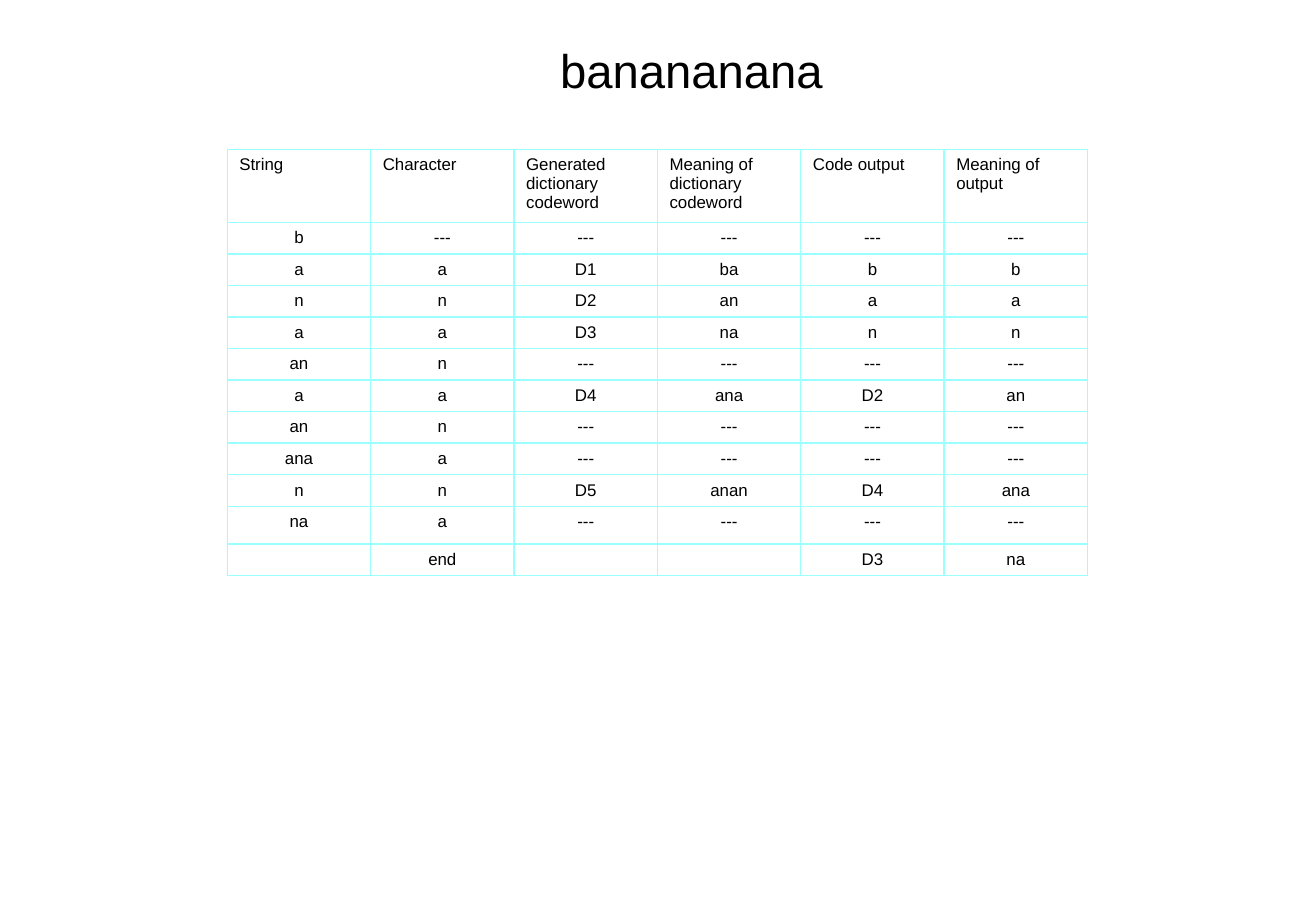
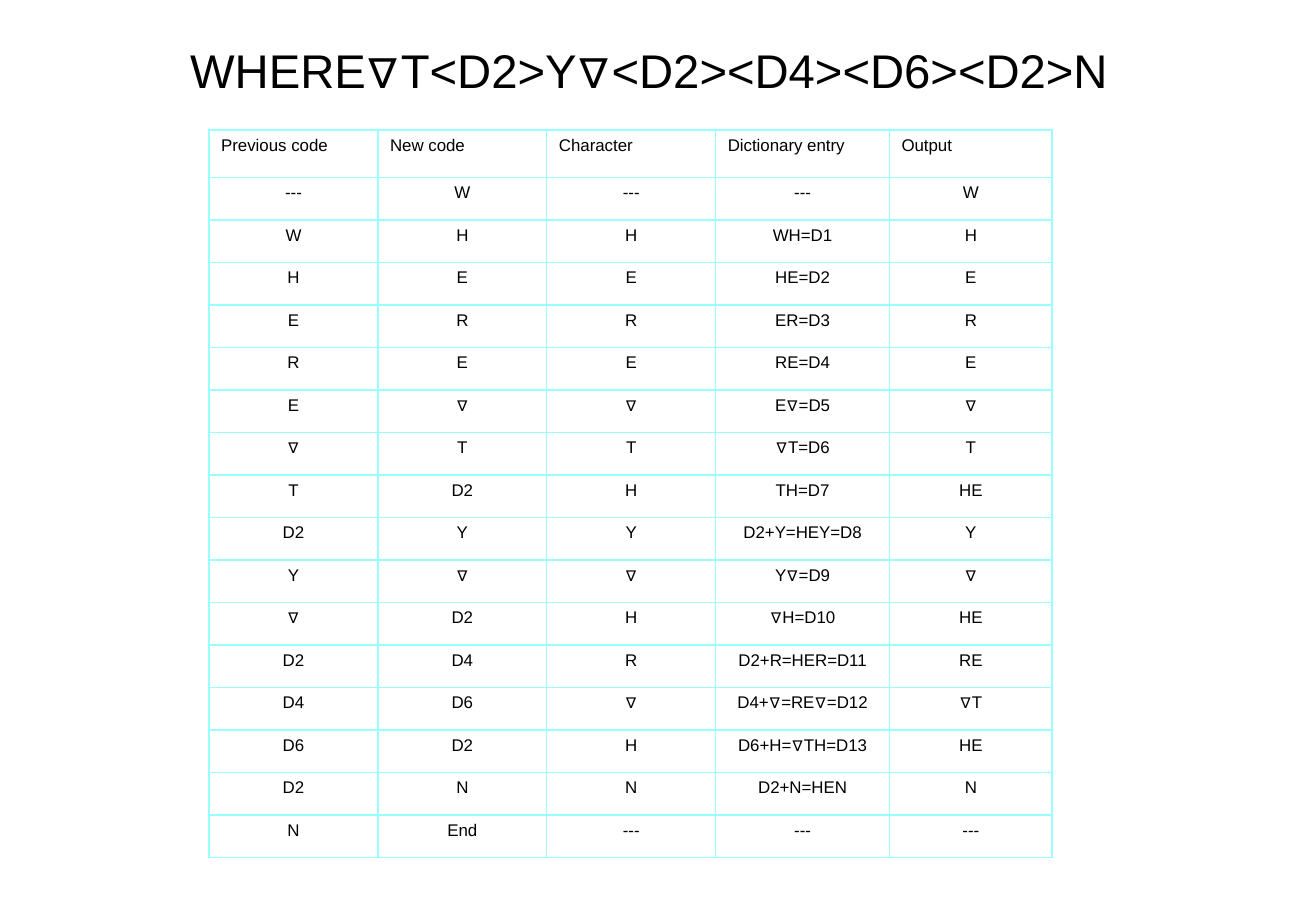
"""Build two slides with tables that trace dictionary encoding and decoding."""
from lxml.etree import SubElement
from pptx import Presentation
from pptx.dml.color import RGBColor
from pptx.enum.text import MSO_AUTO_SIZE, PP_ALIGN
from pptx.oxml.ns import qn
from pptx.util import Inches, Pt

BLACK = RGBColor(0x00, 0x00, 0x00)
WHITE = RGBColor(0xFF, 0xFF, 0xFF)
CYAN = RGBColor(0x99, 0xFF, 0xFF)
FONT = "Arial"
TITLE_SIZE = Pt(28)
CELL_SIZE = Pt(10)

ENCODING = """\
String|Character|Generated dictionary codeword|Meaning of dictionary codeword|Code output|Meaning of output
b|---|---|---|---|---
a|a|D1|ba|b|b
n|n|D2|an|a|a
a|a|D3|na|n|n
an|n|---|---|---|---
a|a|D4|ana|D2|an
an|n|---|---|---|---
ana|a|---|---|---|---
n|n|D5|anan|D4|ana
na|a|---|---|---|---
|end|||D3|na"""

DECODING = """\
Previous code|New code|Character|Dictionary entry|Output
---|W|---|---|W
W|H|H|WH=D1|H
H|E|E|HE=D2|E
E|R|R|ER=D3|R
R|E|E|RE=D4|E
E|∇|∇|E∇=D5|∇
∇|T|T|∇T=D6|T
T|D2|H|TH=D7|HE
D2|Y|Y|D2+Y=HEY=D8|Y
Y|∇|∇|Y∇=D9|∇
∇|D2|H|∇H=D10|HE
D2|D4|R|D2+R=HER=D11|RE
D4|D6|∇|D4+∇=RE∇=D12|∇T
D6|D2|H|D6+H=∇TH=D13|HE
D2|N|N|D2+N=HEN|N
N|End|---|---|---"""

SLIDES = [
    {
        "title": "banananana", "title_left": 2.66, "title_width": 6.06,
        "left": 1.87, "top": 1.23, "rows": ENCODING,
        "widths": [1.18] * 6, "heights": [0.6] + [0.26] * 9 + [0.31, 0.26],
    },
    {
        "title": "WHERE∇T<D2>Y∇<D2><D4><D6><D2>N", "title_left": 1.01, "title_width": 8.66,
        "left": 1.72, "top": 1.07, "rows": DECODING,
        "widths": [1.39] * 3 + [1.43, 1.34], "heights": [0.39] + [0.35] * 16,
    },
]


def style_paragraph(paragraph, size, alignment):
    paragraph.alignment = alignment
    paragraph.font.name = FONT
    paragraph.font.size = size
    paragraph.font.color.rgb = BLACK


def style_cell(cell):
    properties = cell._tc.get_or_add_tcPr()
    for side in ("a:lnL", "a:lnR", "a:lnT", "a:lnB"):
        line = SubElement(properties, qn(side), w=str(Pt(1)))
        fill = SubElement(line, qn("a:solidFill"))
        SubElement(fill, qn("a:srgbClr"), val=str(CYAN))
    cell.fill.solid()
    cell.fill.fore_color.rgb = WHITE


presentation = Presentation()
presentation.slide_width = Inches(10.83)
presentation.slide_height = Inches(7.5)

for content in SLIDES:
    slide = presentation.slides.add_slide(presentation.slide_layouts[6])
    rows = [line.split("|") for line in content["rows"].splitlines()]
    widths, heights = content["widths"], content["heights"]

    table = slide.shapes.add_table(
        len(rows), len(widths), Inches(content["left"]), Inches(content["top"]),
        Inches(sum(widths)), Inches(sum(heights))).table
    table.first_row = False
    table.horz_banding = False
    for column, width in zip(table.columns, widths):
        column.width = Inches(width)
    for row, height in zip(table.rows, heights):
        row.height = Inches(height)

    for row_index, texts in enumerate(rows):
        alignment = PP_ALIGN.CENTER if row_index else PP_ALIGN.LEFT
        for column_index, text in enumerate(texts):
            cell = table.cell(row_index, column_index)
            style_cell(cell)
            paragraph = cell.text_frame.paragraphs[0]
            paragraph.text = text
            style_paragraph(paragraph, CELL_SIZE, alignment)
            if not text:
                SubElement(paragraph._p, qn("a:endParaRPr"), sz=str(CELL_SIZE.centipoints))

    title = slide.shapes.add_textbox(
        Inches(content["title_left"]), Inches(0.29), Inches(content["title_width"]), Inches(0.57))
    title.text_frame.word_wrap = True
    title.text_frame.auto_size = MSO_AUTO_SIZE.SHAPE_TO_FIT_TEXT
    paragraph = title.text_frame.paragraphs[0]
    paragraph.text = content["title"]
    style_paragraph(paragraph, TITLE_SIZE, PP_ALIGN.CENTER)

presentation.save("out.pptx")
